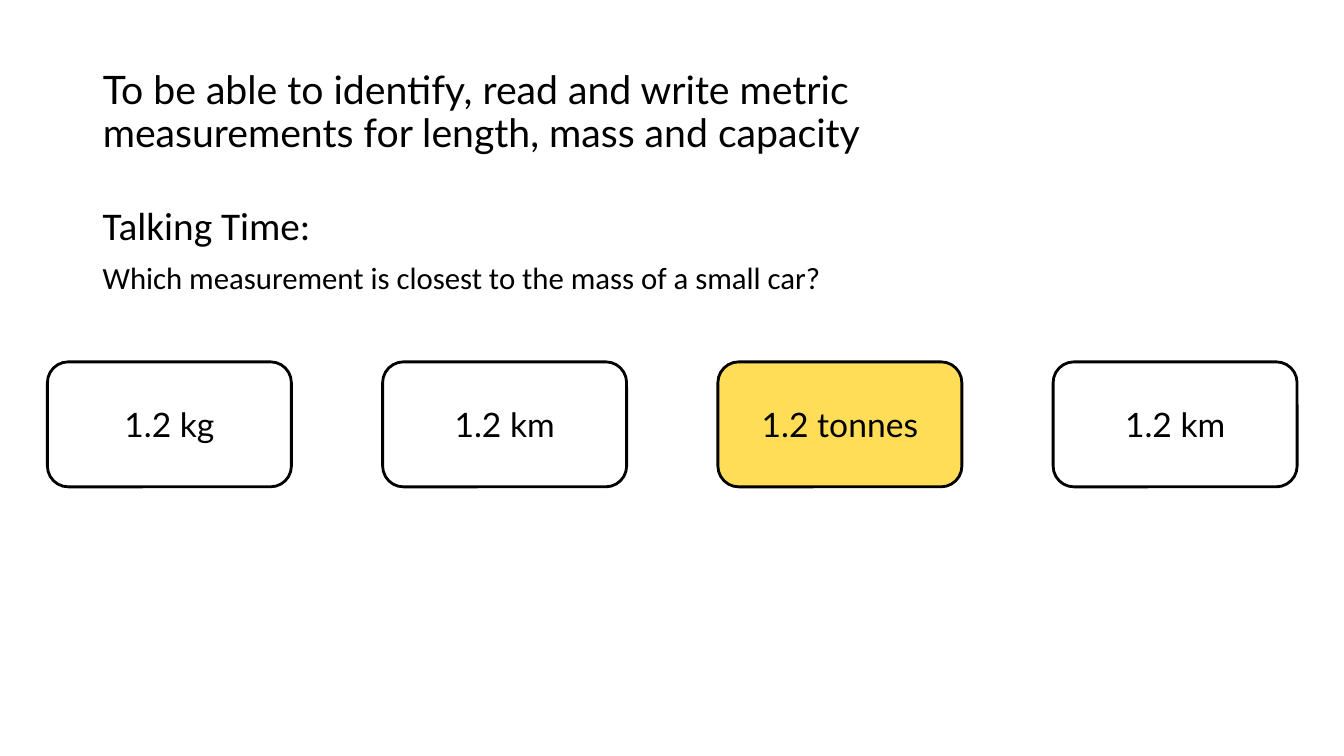
"""Build a maths slide asking which measurement matches the mass of a small car."""
from pptx import Presentation
from pptx import util as u
from pptx.dml.color import RGBColor
from pptx.enum import shapes, text


def color(value):
    return RGBColor.from_string(value)


def write(p, words, font, size, **formats):
    r = p.add_run()
    r.text = words
    r.font.color.rgb = color("000000")
    for name, value in {"name": font, "size": u.Pt(size)}.items():
        setattr(r.font, name, value)
    for name, value in formats.items():
        setattr(p, name, value)


prs = Presentation()
prs.slide_width, prs.slide_height = u.Inches(13.33), u.Inches(7.5)
s = prs.slides.add_slide(prs.slide_layouts[5])

title = s.shapes.title
body = s.shapes.add_textbox(u.Inches(0.92), u.Inches(2), u.Inches(11.5), u.Inches(4.76))
place = {"left": 0.92, "top": 0.4, "width": 9.6, "height": 1.45}
for name, value in place.items():
    setattr(title, name, u.Inches(value))
for sp, anchor in ((title, text.MSO_ANCHOR.MIDDLE), (body, text.MSO_ANCHOR.TOP)):
    frame = {"word_wrap": True, "auto_size": text.MSO_AUTO_SIZE.NONE, "vertical_anchor": anchor}
    for name, value in frame.items():
        setattr(sp.text_frame, name, value)

write(title.text_frame.paragraphs[0],
      "To be able to identify, read and write metric measurements for length, mass and capacity",
      "Lato", 28, line_spacing=0.9, alignment=text.PP_ALIGN.LEFT)
tf = body.text_frame
write(tf.paragraphs[0], "Talking Time:", "Calibri", 28, line_spacing=0.9)
write(tf.add_paragraph(), "Which measurement is closest to the mass of a small car?",
      "Calibri", 22, line_spacing=0.9, space_before=u.Pt(10))

answers = [("1.2 kg", "FFFFFF"), ("1.2 km", "FFFFFF"), ("1.2 tonnes", "FFDD57"), ("1.2 km", "FFFFFF")]
left, pitch = 0.47, 3.325
for i, (answer, fill) in enumerate(answers):
    sp = s.shapes.add_shape(shapes.MSO_SHAPE.ROUNDED_RECTANGLE, u.Inches(left + i * pitch),
                            u.Inches(3.59), u.Inches(2.42), u.Inches(1.24))
    sp.shadow.inherit = False
    sp.fill.solid()
    sp.fill.fore_color.rgb = color(fill)
    sp.line.color.rgb = color("000000")
    sp.line.width = u.Pt(2)
    sp.text_frame.vertical_anchor = text.MSO_ANCHOR.MIDDLE
    write(sp.text_frame.paragraphs[0], answer, "Lato", 24, alignment=text.PP_ALIGN.CENTER)

prs.save("out.pptx")
